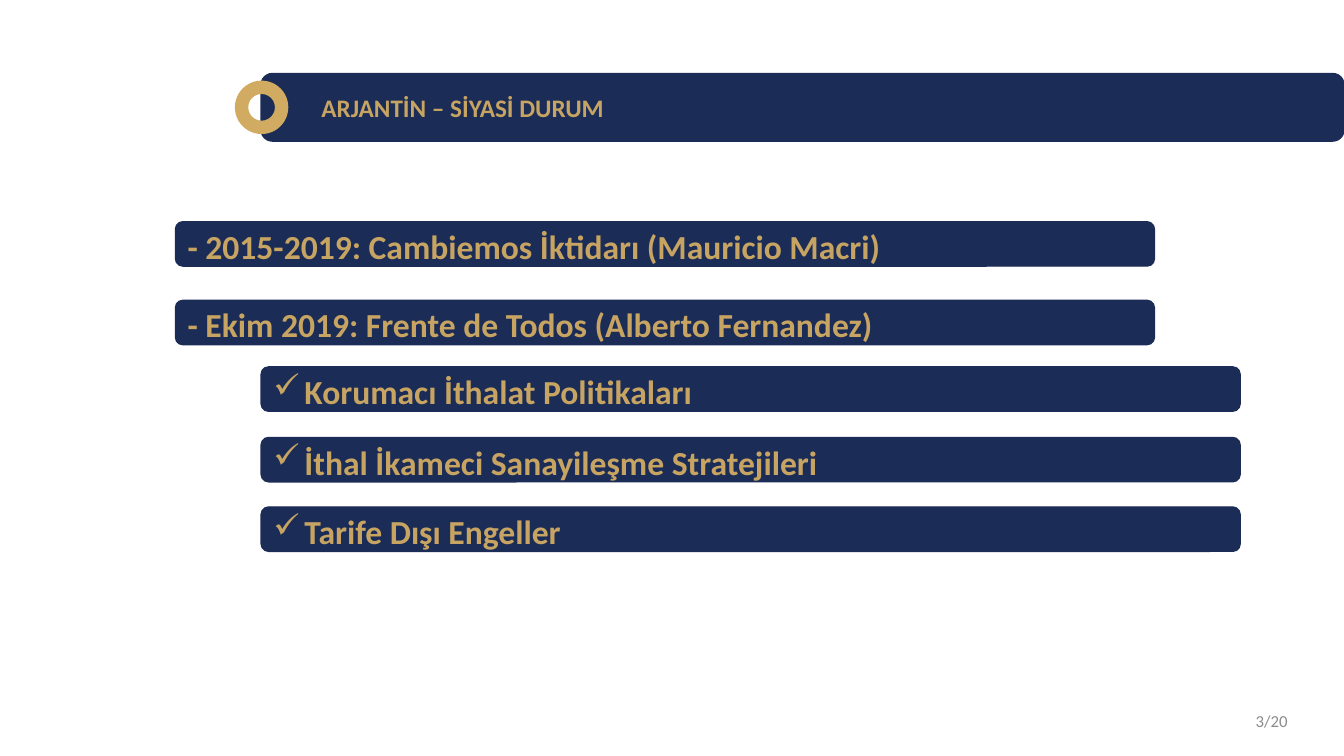
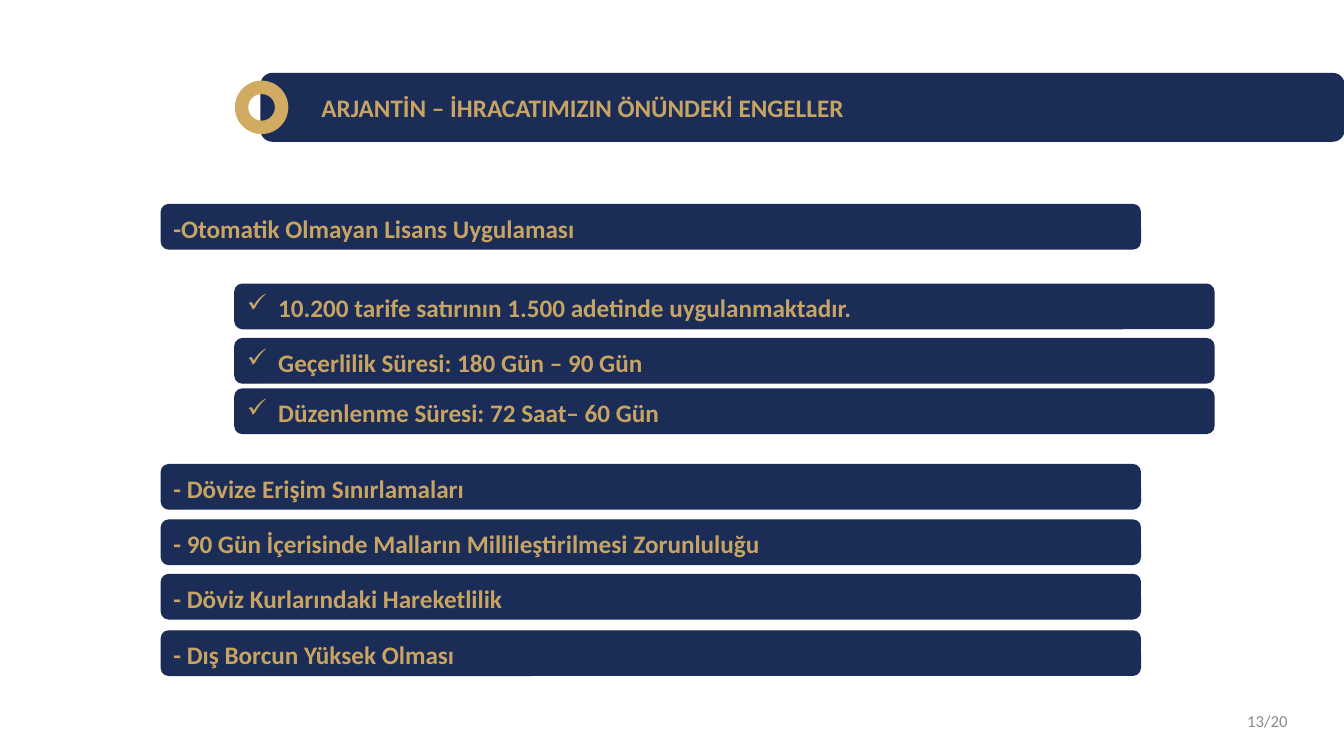
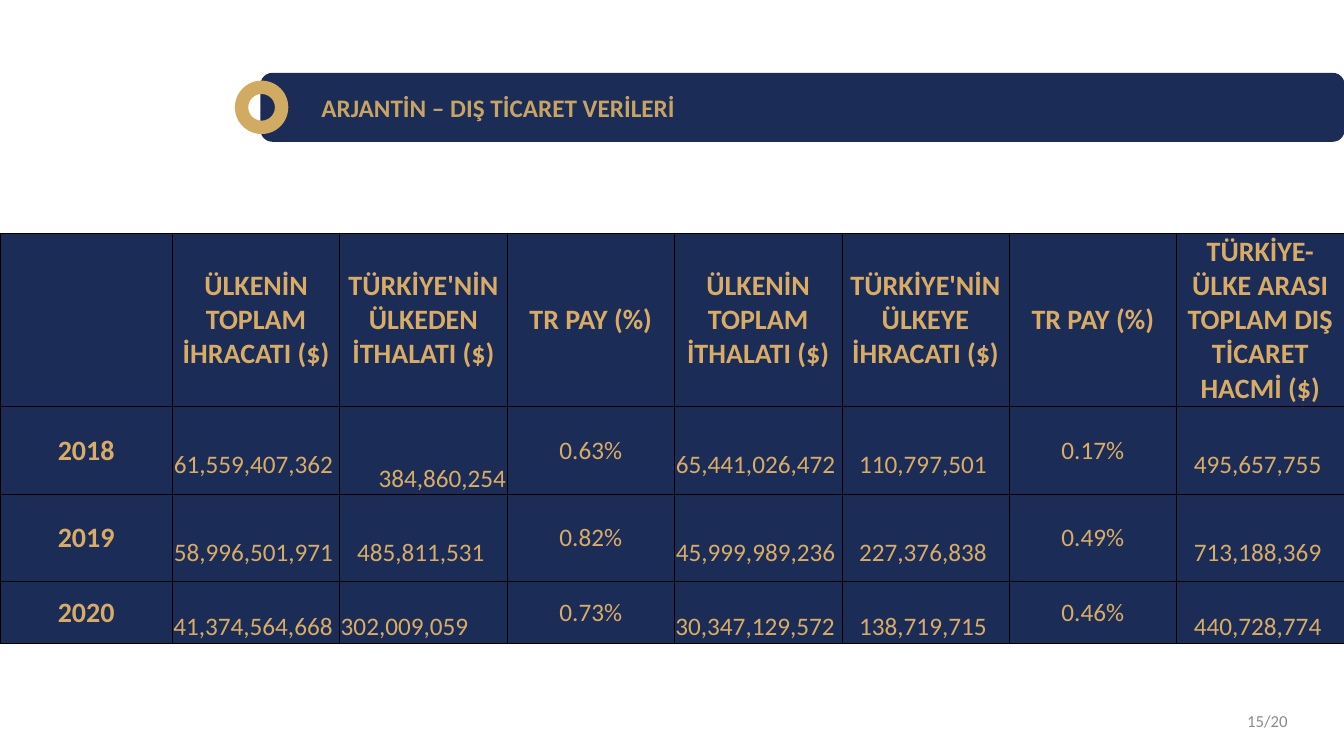
from lxml.etree import SubElement
from pptx import Presentation
from pptx.dml.color import RGBColor
from pptx.enum.shapes import MSO_SHAPE
from pptx.enum.text import MSO_ANCHOR, PP_ALIGN
from pptx.oxml.ns import qn
from pptx.util import Inches, Pt

COLORS = {
    "navy": "1B2C57",
    "ring": "D1AB61",
    "gold": "C7A462",
    "table_gold": "D9AC65",
    "gray": "8C8C8C",
    "border": "000000",
}
FONT = "Calibri"
CHECK_FONT, WINGDINGS_CHECK = "Wingdings", "ü"
PAGE_COUNT = 20
HEADER_BOX = (2.33, 0.73, 11, 0.67)
FOOTER_BOX = (9.87, 6.95, 3, 0.4)
TABLE_BOX = (0, 2.31, 13.33, 4.07)
BAR_WIDTH, BAR_HEIGHT = 9.71, 0.44
CHECK_INDENT = 0.31
YEAR_WIDTH = 1.71
ROW_HEIGHTS = (1.72, 0.87, 0.87, 0.61)
NUMBER_DROP = 0.3

TABLE_HEADINGS = (
    "",
    "ÜLKENİN TOPLAM İHRACATI ($)",
    "TÜRKİYE'NİN ÜLKEDEN İTHALATI ($)",
    "TR PAY (%)",
    "ÜLKENİN TOPLAM İTHALATI ($)",
    "TÜRKİYE'NİN ÜLKEYE İHRACATI ($)",
    "TR PAY (%)",
    "TÜRKİYE-ÜLKE ARASI TOPLAM DIŞ TİCARET HACMİ ($)",
)
TABLE_ROWS = (
    ("2018", "61,559,407,362", "384,860,254", "0.63%",
     "65,441,026,472", "110,797,501", "0.17%", "495,657,755"),
    ("2019", "58,996,501,971", "485,811,531", "0.82%",
     "45,999,989,236", "227,376,838", "0.49%", "713,188,369"),
    ("2020", "41,374,564,668", "302,009,059", "0.73%",
     "30,347,129,572", "138,719,715", "0.46%", "440,728,774"),
)
RIGHT_CELLS = {(1, 2)}
LEFT_CELLS = {(3, 1), (3, 2), (3, 4)}


def color(name):
    return RGBColor.from_string(COLORS[name])


def add_run(paragraph, text, size, color_name, bold=False):
    run = paragraph.add_run()
    run.text = text
    run.font.name = FONT
    run.font.size = Pt(size)
    run.font.bold = bold
    run.font.color.rgb = color(color_name)


def add_filled_shape(shapes, kind, box, fill, outlined=True):
    shape = shapes.add_shape(kind, *map(Inches, box))
    shape.shadow.inherit = False
    shape.fill.solid()
    shape.fill.fore_color.rgb = color(fill)
    if outlined:
        shape.line.color.rgb = color(fill)
        shape.line.width = Pt(1)
    else:
        shape.line.fill.background()
    return shape


def add_label(shapes, box, text, size, color_name, bold=False,
              alignment=PP_ALIGN.LEFT, anchor=MSO_ANCHOR.TOP):
    frame = shapes.add_textbox(*map(Inches, box)).text_frame
    frame.word_wrap = True
    frame.vertical_anchor = anchor
    paragraph = frame.paragraphs[0]
    paragraph.alignment = alignment
    add_run(paragraph, text, size, color_name, bold)


def add_header(slide, box, title):
    left, top, width, height = box
    shapes = slide.shapes.add_group_shape().shapes
    ring = 0.53
    band_left = left + 0.26
    add_filled_shape(shapes, MSO_SHAPE.ROUNDED_RECTANGLE,
                     (band_left, top, width - 0.26, height), "navy")
    add_filled_shape(shapes, MSO_SHAPE.DONUT,
                     (left, top + (height - ring) / 2, ring, ring), "ring", False)
    add_label(shapes, (band_left + 0.5, top + 0.14, 7.44, 0.4), title, 18, "gold", True)


def add_footer(slide, box, page):
    add_label(slide.shapes, box, f"{page}/{PAGE_COUNT}", 12, "gray",
              alignment=PP_ALIGN.RIGHT, anchor=MSO_ANCHOR.MIDDLE)


def add_check_bullet(paragraph):
    properties = paragraph._p.get_or_add_pPr()
    properties.set("marL", str(Inches(CHECK_INDENT)))
    properties.set("indent", str(-Inches(CHECK_INDENT)))
    font = SubElement(properties, qn("a:buFont"))
    font.set("typeface", CHECK_FONT)
    font.set("pitchFamily", "2")
    font.set("charset", "2")
    SubElement(properties, qn("a:buChar")).set("char", WINGDINGS_CHECK)


def add_bars(slide, left, rows, size, checked=False):
    for top, text in rows:
        bar = add_filled_shape(slide.shapes, MSO_SHAPE.ROUNDED_RECTANGLE,
                               (left, top, BAR_WIDTH, BAR_HEIGHT), "navy")
        frame = bar.text_frame
        frame.word_wrap = True
        frame.vertical_anchor = MSO_ANCHOR.MIDDLE
        paragraph = frame.paragraphs[0]
        if checked:
            add_check_bullet(paragraph)
        paragraph.alignment = PP_ALIGN.JUSTIFY
        paragraph.line_spacing = 1.1
        add_run(paragraph, text, size, "gold", True)


def add_cell_borders(cell):
    properties = cell._tc.get_or_add_tcPr()
    for side in ("lnL", "lnR", "lnT", "lnB"):
        line = SubElement(properties, qn(f"a:{side}"))
        line.set("w", str(Pt(0.5)))
        fill = SubElement(line, qn("a:solidFill"))
        SubElement(fill, qn("a:srgbClr")).set("val", COLORS["border"])


def fill_cell(cell, position, text):
    row, column = position
    add_cell_borders(cell)
    cell.fill.solid()
    cell.fill.fore_color.rgb = color("navy")
    cell.vertical_anchor = MSO_ANCHOR.MIDDLE
    cell.margin_left = cell.margin_right = cell.margin_top = Inches(0.01)
    cell.margin_bottom = 0
    paragraph = cell.text_frame.paragraphs[0]
    paragraph.alignment = PP_ALIGN.CENTER
    if position in RIGHT_CELLS:
        paragraph.alignment = PP_ALIGN.RIGHT
        cell.vertical_anchor = MSO_ANCHOR.BOTTOM
    elif row and column and not text.endswith("%"):
        cell.margin_top = Inches(NUMBER_DROP)
        if position in LEFT_CELLS:
            paragraph.alignment = PP_ALIGN.LEFT
        else:
            cell.margin_right = Inches(0.06)
    if text:
        strong = row == 0 or column == 0
        add_run(paragraph, text, 20 if strong else 18, "table_gold", strong)


def add_trade_table(slide, box):
    rows = (TABLE_HEADINGS, *TABLE_ROWS)
    column_count = len(TABLE_HEADINGS)
    table = slide.shapes.add_table(len(rows), column_count, *map(Inches, box)).table
    table.first_row = table.horz_banding = False
    value_width = (box[2] - YEAR_WIDTH) / (column_count - 1)
    for index, column in enumerate(table.columns):
        column.width = Inches(value_width if index else YEAR_WIDTH)
    for row, height in zip(table.rows, ROW_HEIGHTS):
        row.height = Inches(height)
    for row_index, texts in enumerate(rows):
        for column_index, text in enumerate(texts):
            fill_cell(table.cell(row_index, column_index), (row_index, column_index), text)


def add_page(presentation, title, page):
    slide = presentation.slides.add_slide(presentation.slide_layouts[6])
    add_footer(slide, FOOTER_BOX, page)
    add_header(slide, HEADER_BOX, title)
    return slide


def build_politics(presentation):
    slide = add_page(presentation, "ARJANTİN – SİYASİ DURUM", 3)
    add_bars(slide, 1.74, (
        (2.2, "- 2015-2019: Cambiemos İktidarı (Mauricio Macri)"),
        (2.98, "- Ekim 2019: Frente de Todos (Alberto Fernandez)"),
    ), 24)
    add_bars(slide, 2.59, (
        (3.64, "Korumacı İthalat Politikaları"),
        (4.34, "İthal İkameci Sanayileşme Stratejileri"),
        (5.03, "Tarife Dışı Engeller"),
    ), 24, checked=True)


def build_barriers(presentation):
    slide = add_page(presentation, "ARJANTİN – İHRACATIMIZIN ÖNÜNDEKİ ENGELLER", 13)
    add_bars(slide, 1.6, (
        (2.03, "-Otomatik Olmayan Lisans Uygulaması"),
        (4.61, "- Dövize Erişim Sınırlamaları"),
        (5.16, "- 90 Gün İçerisinde Malların Millileştirilmesi Zorunluluğu"),
        (5.7, "- Döviz Kurlarındaki Hareketlilik"),
        (6.26, "- Dış Borcun Yüksek Olması"),
    ), 18)
    add_bars(slide, 2.33, (
        (2.82, "10.200 tarife satırının 1.500 adetinde uygulanmaktadır."),
        (3.36, "Geçerlilik Süresi: 180 Gün – 90 Gün"),
        (3.86, "Düzenlenme Süresi: 72 Saat– 60 Gün"),
    ), 18, checked=True)


def build_trade(presentation):
    slide = add_page(presentation, "ARJANTİN – DIŞ TİCARET VERİLERİ", 15)
    add_trade_table(slide, TABLE_BOX)


def main():
    presentation = Presentation()
    presentation.slide_width = Inches(13.33)
    presentation.slide_height = Inches(7.5)
    build_politics(presentation)
    build_barriers(presentation)
    build_trade(presentation)
    presentation.save("out.pptx")


if __name__ == "__main__":
    main()
